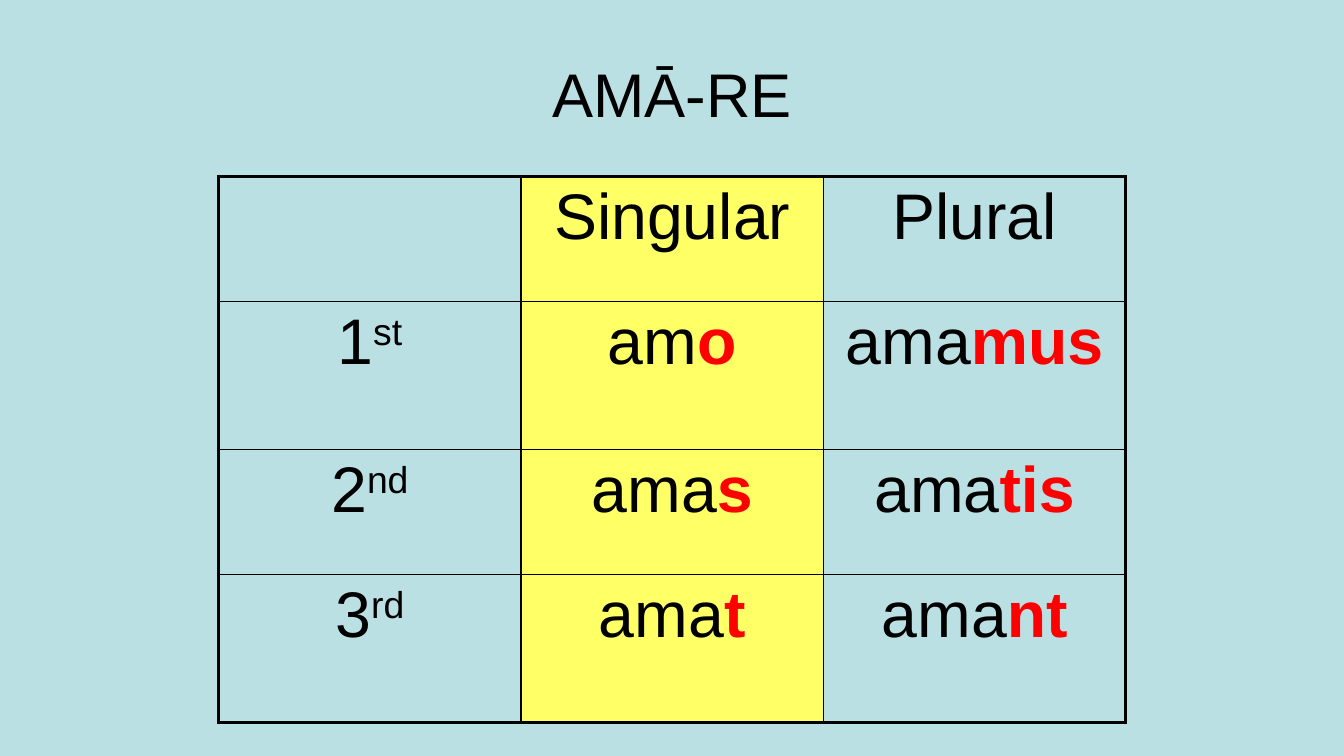
from dataclasses import dataclass

from lxml.etree import SubElement
from pptx import Presentation
from pptx.dml.color import RGBColor
from pptx.enum.text import MSO_ANCHOR, MSO_AUTO_SIZE, PP_ALIGN
from pptx.oxml.ns import qn
from pptx.slide import Slide
from pptx.table import _Cell
from pptx.text.text import _Run
from pptx.util import Cm, Pt


@dataclass(frozen=True)
class Theme:
    font: str = "Arial"
    background: RGBColor = RGBColor(0xBB, 0xE0, 0xE3)
    text: RGBColor = RGBColor(0, 0, 0)
    ending: RGBColor = RGBColor(0xFF, 0, 0)
    highlight: RGBColor = RGBColor(0xFF, 0xFF, 0x66)
    title_size: float = 44
    table_size: float = 46
    outer_line: float = 2.25
    inner_line: float = 1


@dataclass(frozen=True)
class Entry:
    stem: str = ""
    ending: str = ""
    ordinal: str = ""


THEME = Theme()
ROW_HEIGHTS = (3.15, 3.73, 3.15, 3.73)
COLUMN_WIDTH = 7.62
SINGULAR_COLUMN = 1
CONJUGATION = (
    (Entry(), Entry("Singular"), Entry("Plural")),
    (Entry("1", ordinal="st"), Entry("am", "o"), Entry("ama", "mus")),
    (Entry("2", ordinal="nd"), Entry("ama", "s"), Entry("ama", "tis")),
    (Entry("3", ordinal="rd"), Entry("ama", "t"), Entry("ama", "nt")),
)


def format_run(r: _Run, size: float, color: RGBColor, bold: bool = False) -> None:
    r.font.name = THEME.font
    r.font.size = Pt(size)
    r.font.color.rgb = color
    r.font.bold = bold


def add_title(s: Slide, text: str) -> None:
    sp = s.shapes.title
    sp.left, sp.top, sp.width, sp.height = Cm(1.7), Cm(0.76), Cm(30.48), Cm(3.18)
    tf = sp.text_frame
    tf.text = text
    tf.auto_size = MSO_AUTO_SIZE.NONE
    tf.vertical_anchor = MSO_ANCHOR.MIDDLE
    p = tf.paragraphs[0]
    p.alignment = PP_ALIGN.CENTER
    format_run(p.runs[0], THEME.title_size, THEME.text)


def write_entry(cell: _Cell, entry: Entry) -> None:
    p = cell.text_frame.paragraphs[0]
    p.text = entry.stem
    p.alignment = PP_ALIGN.CENTER
    spacing = SubElement(p._p.get_or_add_pPr(), qn("a:spcBef"))
    SubElement(spacing, qn("a:spcPct"), val="20000")
    for r in p.runs:
        format_run(r, THEME.table_size, THEME.text)
    if entry.ending:
        r = p.add_run()
        r.text = entry.ending
        format_run(r, THEME.table_size, THEME.ending, bold=True)
    if entry.ordinal:
        r = p.add_run()
        r.text = entry.ordinal
        format_run(r, THEME.table_size, THEME.text)
        r.font._element.set("baseline", "30000")


def draw_borders(cell: _Cell, outer_sides: dict[str, bool]) -> None:
    tc_pr = cell._tc.get_or_add_tcPr()
    for side, outer in outer_sides.items():
        width = Pt(THEME.outer_line if outer else THEME.inner_line)
        ln = SubElement(tc_pr, qn(f"a:ln{side}"), w=str(width))
        fill = SubElement(ln, qn("a:solidFill"))
        SubElement(fill, qn("a:srgbClr"), val=str(THEME.text))


def add_conjugation(s: Slide) -> None:
    rows, cols = len(CONJUGATION), len(CONJUGATION[0])
    table = s.shapes.add_table(
        rows, cols, Cm(5.51), Cm(4.45), Cm(COLUMN_WIDTH * cols), Cm(sum(ROW_HEIGHTS))
    ).table
    table.first_row = False
    table.horz_banding = False
    for column in table.columns:
        column.width = Cm(COLUMN_WIDTH)
    for row, height in zip(table.rows, ROW_HEIGHTS):
        row.height = Cm(height)
    for i, entries in enumerate(CONJUGATION):
        for j, entry in enumerate(entries):
            cell = table.cell(i, j)
            write_entry(cell, entry)
            draw_borders(
                cell,
                {"L": j == 0, "R": j == cols - 1, "T": i == 0, "B": i == rows - 1},
            )
            if j == SINGULAR_COLUMN:
                cell.fill.solid()
                cell.fill.fore_color.rgb = THEME.highlight
            else:
                cell.fill.background()


def main() -> None:
    prs = Presentation()
    prs.slide_width, prs.slide_height = Cm(33.87), Cm(19.05)
    s = prs.slides.add_slide(prs.slide_layouts[5])
    s.background.fill.solid()
    s.background.fill.fore_color.rgb = THEME.background
    add_title(s, "AMĀ-RE")
    add_conjugation(s)
    prs.save("out.pptx")


if __name__ == "__main__":
    main()
